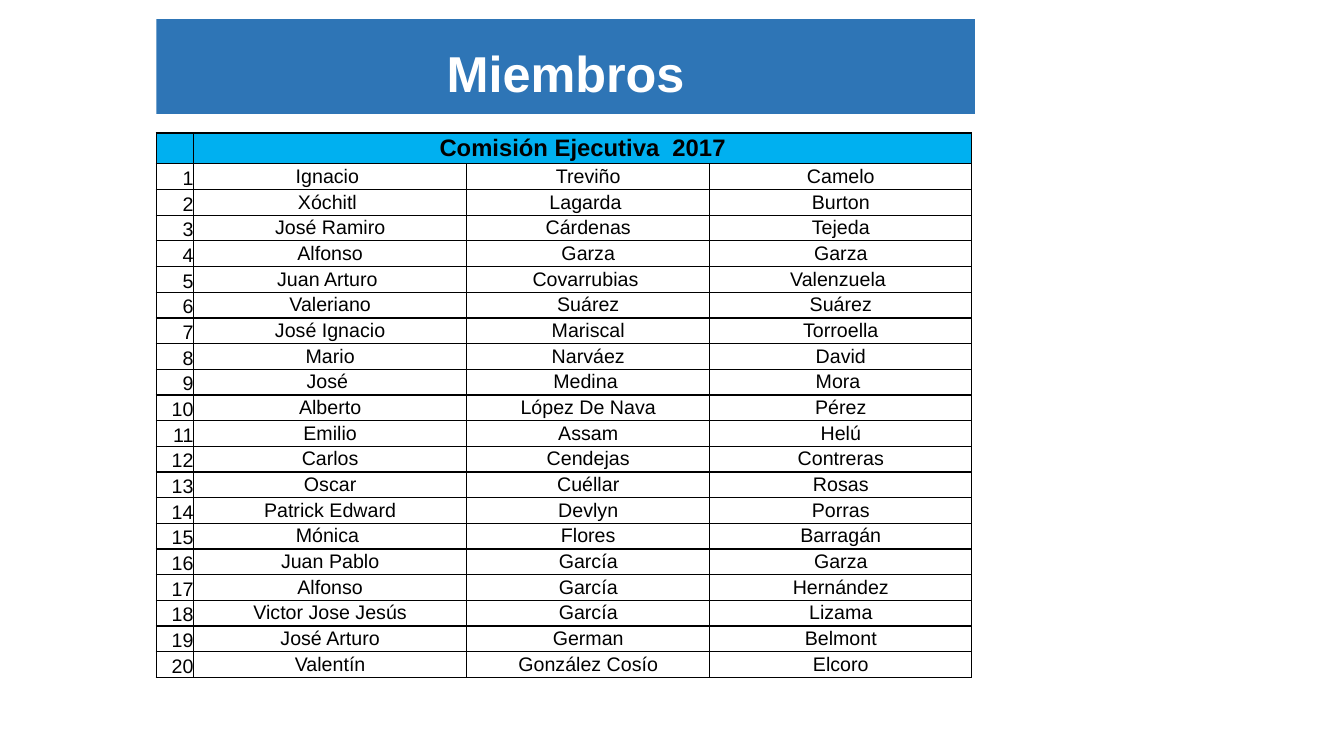
from lxml import etree
from pptx import Presentation
from pptx.dml.color import RGBColor
from pptx.enum.shapes import MSO_SHAPE
from pptx.enum.text import MSO_ANCHOR, PP_ALIGN
from pptx.oxml.ns import qn
from pptx.util import Inches, Pt

RECT = MSO_SHAPE.RECTANGLE
MIDDLE, BOTTOM = MSO_ANCHOR.MIDDLE, MSO_ANCHOR.BOTTOM
CENTER, RIGHT = PP_ALIGN.CENTER, PP_ALIGN.RIGHT
SIDES = ("left", "right", "top", "bottom")

COLORS = {"banner": "2E75B6", "header": "00B0F0", "body": "FFFFFF",
          "light": "FFFFFF", "dark": "000000"}

LEFT = 1.55
COLUMN_WIDTHS = (0.37, 2.71, 2.41, 2.6)
TABLE_TOP, TABLE_HEIGHT, HEADER_HEIGHT = 1.32, 5.4, 0.3

MEMBERS = [
    ("Ignacio ", "Treviño", "Camelo"),
    ("Xóchitl ", "Lagarda ", "Burton"),
    ("José Ramiro", "Cárdenas", "Tejeda"),
    ("Alfonso", "Garza", "Garza"),
    ("Juan Arturo ", "Covarrubias ", "Valenzuela "),
    ("Valeriano", "Suárez", "Suárez"),
    ("José Ignacio", "Mariscal", "Torroella"),
    ("Mario", "Narváez", "David"),
    ("José ", "Medina ", "Mora "),
    ("Alberto", "López De Nava", "Pérez"),
    ("Emilio", "Assam", "Helú"),
    ("Carlos", "Cendejas", "Contreras"),
    ("Oscar", "Cuéllar", "Rosas"),
    ("Patrick Edward", "Devlyn", "Porras"),
    ("Mónica ", "Flores", "Barragán"),
    ("Juan Pablo", "García", "Garza"),
    ("Alfonso", "García", "Hernández"),
    ("Victor Jose Jesús", "García", "Lizama"),
    ("José Arturo", "German", "Belmont"),
    ("Valentín", "González Cosío", "Elcoro"),
]


class SlideBuilder:
    def __init__(self, slide, font="Arial"):
        self.slide = slide
        self.font = font

    def fill(self, target, color):
        target.fill.solid()
        target.fill.fore_color.rgb = RGBColor.from_string(COLORS[color])

    def text(self, tf, text, size, color="dark", bold=False, align=CENTER):
        p = tf.paragraphs[0]
        p.alignment = align
        r = p.add_run()
        r.text = text
        for name, value in {"name": self.font, "size": Pt(size), "bold": bold}.items():
            setattr(r.font, name, value)
        r.font.color.rgb = RGBColor.from_string(COLORS[color])
        return p

    def banner(self, text, x, y, w, h):
        sp = self.slide.shapes.add_shape(RECT, Inches(x), Inches(y), Inches(w), Inches(h))
        sp.shadow.inherit = False
        self.fill(sp, "banner")
        sp.line.fill.background()
        tf = sp.text_frame
        tf.word_wrap = True
        tf.vertical_anchor = BOTTOM
        for side in SIDES:
            setattr(tf, f"margin_{side}", Inches(0.1))
        self.text(tf, text, 36, "light", True).line_spacing = 0.9

    def cell(self, cell, color, anchor=MIDDLE):
        """Give a cell its fill, anchor, zero margins and thin border."""
        self.fill(cell, color)
        cell.vertical_anchor = anchor
        for side in SIDES:
            setattr(cell, f"margin_{side}", 0)
        props = cell._tc.get_or_add_tcPr()
        for i, tag in enumerate(("a:lnL", "a:lnR", "a:lnT", "a:lnB")):
            ln = etree.Element(qn(tag), w=str(Pt(1)))
            solid = etree.SubElement(ln, qn("a:solidFill"))
            etree.SubElement(solid, qn("a:srgbClr"), val=COLORS["dark"])
            props.insert(i, ln)

    def member_table(self, title, members, x, y, h):
        row_count = len(members) + 1
        frame = self.slide.shapes.add_table(
            row_count, len(COLUMN_WIDTHS), Inches(x), Inches(y),
            Inches(sum(COLUMN_WIDTHS)), Inches(h))
        table = frame.table
        for column, width in zip(table.columns, COLUMN_WIDTHS):
            column.width = Inches(width)
        for row in table.rows:
            row.height = Inches((h - HEADER_HEIGHT) / len(members))
        table.rows[0].height = Inches(HEADER_HEIGHT)

        for cell in table.rows[0].cells:
            self.cell(cell, "header")
        table.cell(0, 1).merge(table.cell(0, len(COLUMN_WIDTHS) - 1))
        self.text(table.cell(0, 1).text_frame, title, 17, bold=True)

        for number, names in enumerate(members, 1):
            for col, value in enumerate((str(number), *names)):
                cell = table.cell(number, col)
                self.cell(cell, "body", MIDDLE if col else BOTTOM)
                self.text(cell.text_frame, value, 14, align=CENTER if col else RIGHT)


def main():
    prs = Presentation()
    prs.slide_width, prs.slide_height = Inches(13.33), Inches(7.5)
    s = SlideBuilder(prs.slides.add_slide(prs.slide_layouts[6]))
    s.member_table("Comisión Ejecutiva  2017", MEMBERS, LEFT, TABLE_TOP, TABLE_HEIGHT)
    s.banner("Miembros", LEFT, 0.19, 8.12, 0.94)
    prs.save("out.pptx")


if __name__ == "__main__":
    main()
